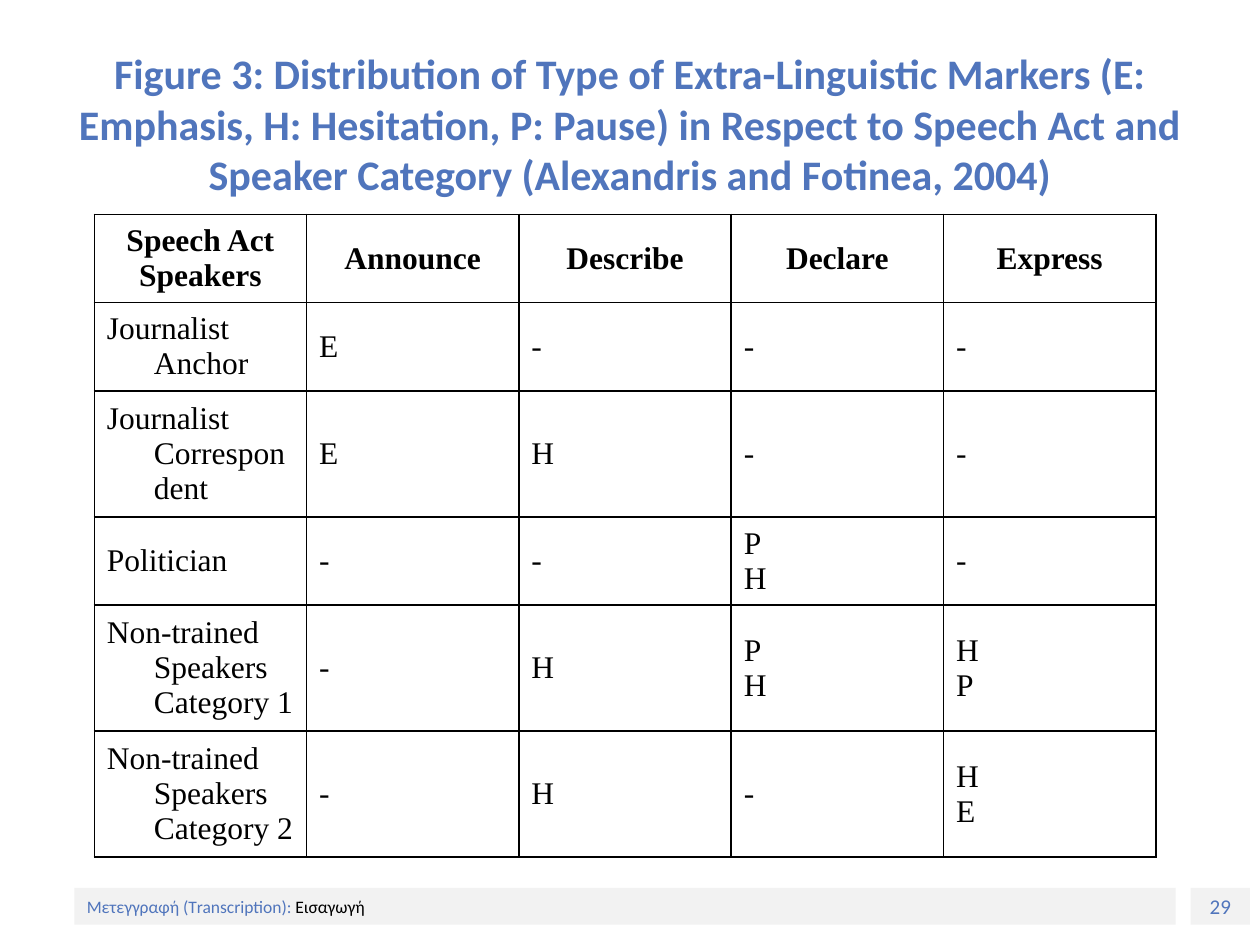
from lxml import etree
from pptx import Presentation, util as u
from pptx.dml import color
from pptx.enum import shapes, text
from pptx.oxml import ns

COLORS = {"blue": "5075BC", "grey": "F2F2F2", "black": "000000"}
HEADERS = ["Speech Act\nSpeakers", "Announce", "Describe", "Declare", "Express"]
MARKERS = [
    ["Journalist Anchor", "E", "-", "-", "-"],
    ["Journalist Correspondent", "E", "H", "-", "-"],
    ["Politician", "-", "-", "P\nH", "-"],
    ["Non-trained Speakers Category 1", "-", "H", "P\nH", "H\nP"],
    ["Non-trained Speakers Category 2", "-", "H", "-", "H\nE"],
]
SHORT_ROW, TALL_ROW = u.Cm(1.63), u.Cm(2.31)
ROW_HEIGHTS = [SHORT_ROW, SHORT_ROW, TALL_ROW, SHORT_ROW, TALL_ROW, TALL_ROW]


def rgb(name):
    """Return a named colour as an RGB value."""
    return color.RGBColor.from_string(COLORS[name])


def write(frame, *pieces, size, font="Calibri", bold=False, align="LEFT", hanging=0):
    """Write (text, colour) pieces, starting a paragraph at each line break."""
    frame.word_wrap = True
    frame.vertical_anchor = text.MSO_ANCHOR.MIDDLE
    paragraph = frame.paragraphs[0]
    for words, hue in pieces:
        for number, line in enumerate(words.split("\n")):
            if number:
                paragraph = frame.add_paragraph()
            paragraph.alignment = text.PP_ALIGN[align]
            if hanging:
                layout = paragraph._p.get_or_add_pPr()
                layout.set("marL", str(hanging))
                layout.set("indent", str(-hanging))
            run = paragraph.add_run()
            run.text = line
            run.font.name, run.font.size, run.font.bold = font, u.Pt(size), bold
            run.font.color.rgb = rgb(hue)


def add_title(slide, title):
    """Add the centred figure title."""
    box = slide.shapes.add_textbox(u.Cm(1.27), u.Cm(0.9), u.Cm(22.86), u.Cm(3.18))
    write(box.text_frame, (title, "blue"), size=24, bold=True, align="CENTER")


def add_footer_panel(slide, left, width, *pieces, **style):
    """Add a grey footer panel with its text."""
    panel = slide.shapes.add_shape(shapes.MSO_SHAPE.RECTANGLE, left, u.Cm(17.9), width, u.Cm(0.74))
    panel.shadow.inherit = False
    panel.fill.solid()
    panel.fill.fore_color.rgb = rgb("grey")
    panel.line.fill.background()
    write(panel.text_frame, *pieces, **style)


def outline(cell):
    """Draw thin black borders around an unfilled cell."""
    properties = cell._tc.get_or_add_tcPr()
    for side in ("a:lnL", "a:lnR", "a:lnT", "a:lnB"):
        border = etree.SubElement(properties, ns.qn(side), w=str(u.Pt(1)))
        fill = etree.SubElement(border, ns.qn("a:solidFill"))
        etree.SubElement(fill, ns.qn("a:srgbClr"), val=COLORS["black"])
    cell.fill.background()


def add_marker_table(slide):
    """Add the table of markers by speaker and speech act."""
    frame = slide.shapes.add_table(len(ROW_HEIGHTS), len(HEADERS), u.Cm(1.9), u.Cm(4.32),
                                   u.Cm(21.4), sum(ROW_HEIGHTS))
    table = frame.table
    table.first_row = table.horz_banding = False
    for column in table.columns:
        column.width = u.Cm(4.28)
    for index, (row, height, entries) in enumerate(zip(table.rows, ROW_HEIGHTS, [HEADERS] + MARKERS)):
        row.height = height
        for cell, entry in zip(row.cells, entries):
            outline(cell)
            write(cell.text_frame, (entry, "black"), size=18, font="Times New Roman",
                  bold=index == 0, align="JUSTIFY" if index else "CENTER", hanging=u.Cm(0.95))
            cell.vertical_anchor = text.MSO_ANCHOR.MIDDLE


def main():
    """Build and save the slide."""
    deck = Presentation()
    deck.slide_width, deck.slide_height = u.Cm(25.4), u.Cm(19.05)
    slide = deck.slides.add_slide(deck.slide_layouts[6])
    add_footer_panel(slide, u.Cm(24), u.Cm(1.2), ("29", "blue"), size=12, align="CENTER")
    add_footer_panel(slide, u.Cm(1.5), u.Cm(22.2), ("Μετεγγραφή (Τranscription): ", "blue"),
                     ("Εισαγωγή", "black"), size=10)
    add_title(slide, "Figure 3: Distribution of Type of Extra-Linguistic Markers "
                     "(E: Emphasis, H: Hesitation, P: Pause) in Respect to Speech Act "
                     "and Speaker Category (Alexandris and Fotinea, 2004)")
    add_marker_table(slide)
    deck.save("out.pptx")


if __name__ == "__main__":
    main()
